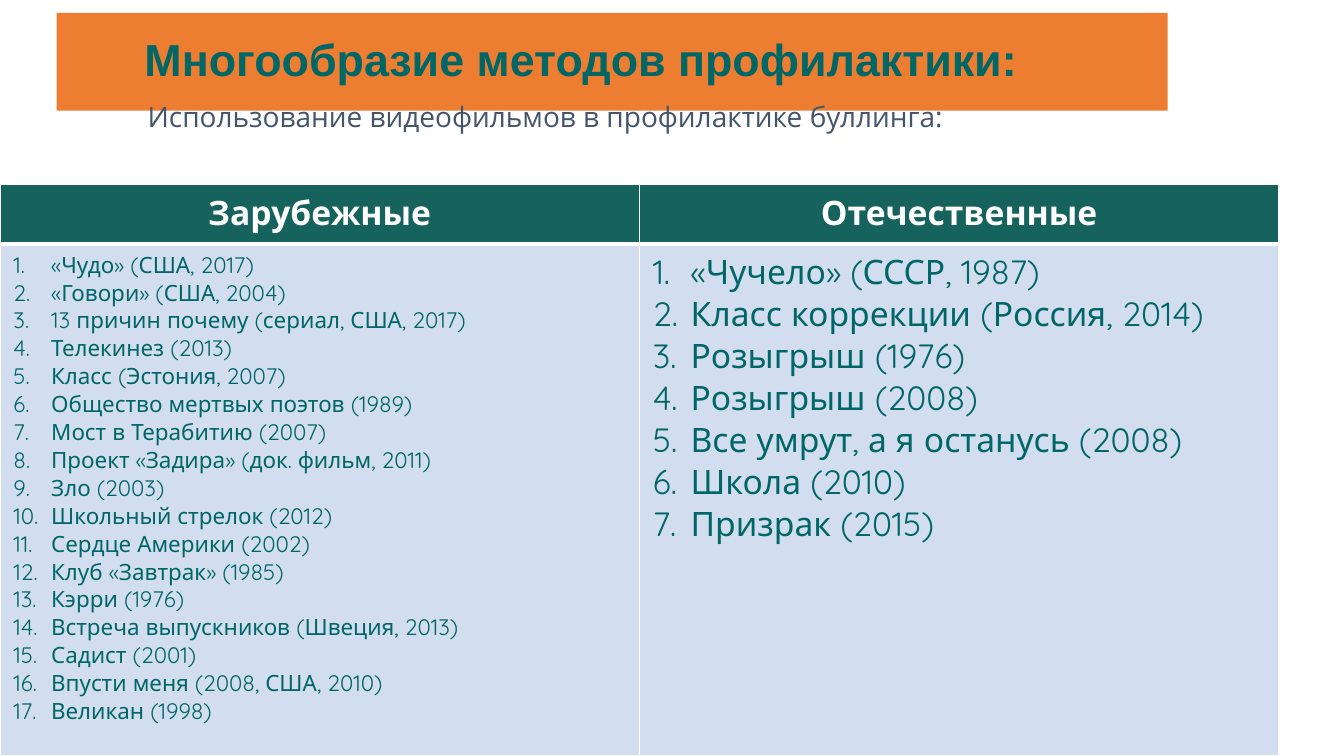
"""Build a slide listing foreign and Russian films used in bullying prevention."""
from dataclasses import dataclass

from lxml.etree import SubElement
from pptx import Presentation
from pptx.dml.color import RGBColor as Rgb
from pptx.enum.shapes import MSO_SHAPE as Preset
from pptx.enum.text import MSO_ANCHOR as Anchor, PP_ALIGN as Align
from pptx.oxml.ns import qn
from pptx.util import Pt

TITLE = "Многообразие методов профилактики:"
SUBTITLE = "Использование видеофильмов в профилактике буллинга:"
FILMS = {
    "Зарубежные": [
        "«Чудо» (США, 2017)",
        "«Говори» (США, 2004)",
        "13 причин почему (сериал, США, 2017)",
        "Телекинез (2013)",
        "Класс (Эстония, 2007)",
        "Общество мертвых поэтов (1989)",
        "Мост в Терабитию (2007)",
        "Проект «Задира» (док. фильм, 2011)",
        "Зло (2003)",
        "Школьный стрелок (2012)",
        "Сердце Америки (2002)",
        "Клуб «Завтрак» (1985)",
        "Кэрри (1976)",
        "Встреча выпускников (Швеция, 2013)",
        "Садист (2001)",
        "Впусти меня (2008, США, 2010)",
        "Великан (1998)",
    ],
    "Отечественные": [
        "«Чучело» (СССР, 1987)",
        "Класс коррекции (Россия, 2014)",
        "Розыгрыш (1976)",
        "Розыгрыш (2008)",
        "Все умрут, а я останусь (2008)",
        "Школа (2010)",
        "Призрак (2015)",
    ],
}


@dataclass(frozen=True)
class Theme:
    """Colours, fonts and type sizes of the slide."""
    orange: str = "ED7D31"
    teal: str = "006666"
    header: str = "16625C"
    body: str = "D2DEEF"
    slate: str = "44546A"
    white: str = "FFFFFF"
    title_font: str = "Arial"
    subtitle_font: str = "Open Sans"
    table_font: str = "Quicksand"
    title_size: int = 32
    subtitle_size: int = 20
    header_size: int = 24
    film_sizes: tuple = (16, 24)


THEME = Theme()
SLIDE_SIZE = (960, 540)
BANNER = (40.5, 9.2, 793.5, 69.8)
TITLE_BOX = (93.6, 13, 716.4, 69.8)
SUBTITLE_BOX = (95.8, 69.1, 729.4, 347)
TABLE_TOP, TABLE_WIDTH, HEADER_HEIGHT = 132, 913.4, 42.4
INSET, CELL_INSET, INDENT = 9.6, 4.8, 27
THIN, THICK = 1, 3


def style_runs(paragraph, font, size, colour, bold=False):
    for run in paragraph.runs:
        run.font.name, run.font.size, run.font.bold = font, Pt(size), bold
        run.font.color.rgb = Rgb.from_string(colour)


def add_label(slide, box, text, *style):
    frame = slide.shapes.add_textbox(*map(Pt, box)).text_frame
    frame.word_wrap = True
    frame.margin_left = frame.margin_right = Pt(INSET)
    frame.margin_top = frame.margin_bottom = Pt(INSET)
    frame.text = text
    style_runs(frame.paragraphs[0], *style)
    return frame.paragraphs[0]


def format_cell(cell, fill, top, bottom):
    cell.margin_left = cell.margin_right = Pt(INSET)
    cell.margin_top = cell.margin_bottom = Pt(CELL_INSET)
    cell.vertical_anchor = Anchor.TOP
    properties = cell._tc.get_or_add_tcPr()
    for side, width in zip("LRTB", (THIN, THIN, top, bottom)):
        border = SubElement(properties, qn(f"a:ln{side}"), w=str(Pt(width)))
        paint = SubElement(border, qn("a:solidFill"))
        SubElement(paint, qn("a:srgbClr"), val=THEME.white)
    cell.fill.solid()
    cell.fill.fore_color.rgb = Rgb.from_string(fill)


def number(paragraph):
    properties = paragraph._p.get_or_add_pPr()
    properties.set("marL", str(Pt(INDENT)))
    properties.set("indent", str(-Pt(INDENT)))
    SubElement(properties, qn("a:buFont"), typeface="+mj-lt")
    SubElement(properties, qn("a:buAutoNum"), type="arabicPeriod")


def add_films(slide):
    height = SLIDE_SIZE[1] - TABLE_TOP
    table = slide.shapes.add_table(
        2, len(FILMS), 0, Pt(TABLE_TOP), Pt(TABLE_WIDTH), Pt(height)).table
    table.rows[0].height = Pt(HEADER_HEIGHT)
    table.rows[1].height = Pt(height - HEADER_HEIGHT)
    for column, (origin, films) in enumerate(FILMS.items()):
        heading, listing = table.cell(0, column), table.cell(1, column)
        format_cell(heading, THEME.header, THIN, THICK)
        format_cell(listing, THEME.body, THICK, THIN)
        heading.text_frame.text = origin
        caption = heading.text_frame.paragraphs[0]
        caption.alignment = Align.CENTER
        style_runs(caption, THEME.table_font, THEME.header_size, THEME.white, True)
        listing.text_frame.text = "\n".join(films)
        for film in listing.text_frame.paragraphs:
            number(film)
            style_runs(film, THEME.table_font, THEME.film_sizes[column], THEME.teal)


def main():
    deck = Presentation()
    deck.slide_width, deck.slide_height = map(Pt, SLIDE_SIZE)
    slide = deck.slides.add_slide(deck.slide_layouts[6])
    banner = slide.shapes.add_shape(Preset.RECTANGLE, *map(Pt, BANNER))
    banner.shadow.inherit = False
    banner.fill.solid()
    banner.fill.fore_color.rgb = Rgb.from_string(THEME.orange)
    banner.line.fill.background()
    add_label(slide, TITLE_BOX, TITLE,
              THEME.title_font, THEME.title_size, THEME.teal, True)
    subtitle = add_label(slide, SUBTITLE_BOX, SUBTITLE,
                         THEME.subtitle_font, THEME.subtitle_size, THEME.slate)
    subtitle.line_spacing = 0.7
    add_films(slide)
    deck.save("out.pptx")


if __name__ == "__main__":
    main()
